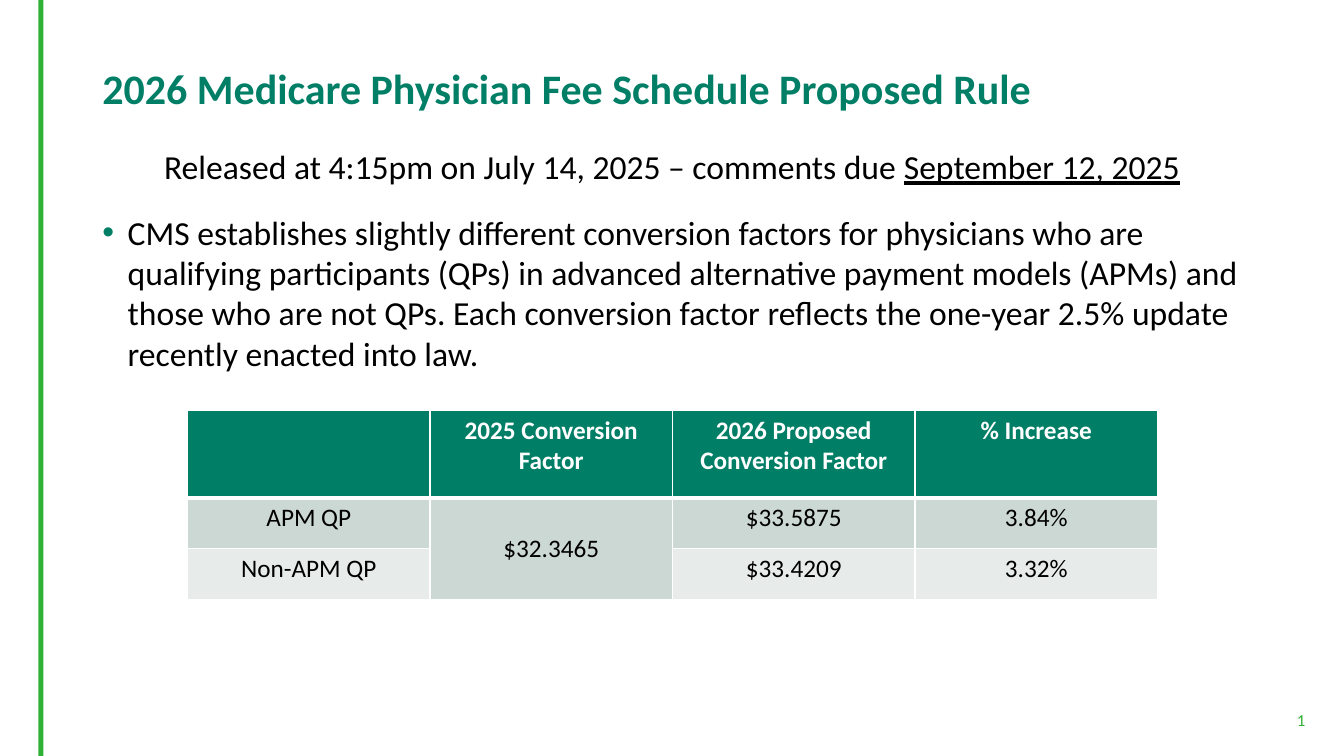
from lxml.etree import SubElement
from pptx import Presentation
from pptx.dml.color import RGBColor
from pptx.enum.shapes import MSO_SHAPE
from pptx.enum.text import MSO_ANCHOR, MSO_AUTO_SIZE, PP_ALIGN
from pptx.oxml.ns import qn
from pptx.util import Pt

TEAL = RGBColor(0x00, 0x7E, 0x66)
GREEN = RGBColor(0x2E, 0xB1, 0x35)
BLACK = RGBColor(0x00, 0x00, 0x00)
WHITE = RGBColor(0xFF, 0xFF, 0xFF)
BAND_DARK = RGBColor(0xCC, 0xD8, 0xD3)
BAND_LIGHT = RGBColor(0xE7, 0xEC, 0xEA)


class SlideBuilder:
    font = "Calibri"

    def __init__(self, slide):
        self.slide = slide

    def place(self, sp, left, top, width, height, anchor=MSO_ANCHOR.TOP):
        sp.left, sp.top, sp.width, sp.height = map(Pt, (left, top, width, height))
        tf = sp.text_frame
        tf.word_wrap = True
        tf.auto_size = MSO_AUTO_SIZE.NONE
        tf.vertical_anchor = anchor
        return tf

    def run(self, p, text, size, color, bold=False, underline=False):
        r = p.add_run()
        r.text = text
        f = r.font
        f.name, f.size, f.bold, f.underline = self.font, Pt(size), bold, underline
        f.color.rgb = color

    def bar(self, left, top, width, height, color):
        sp = self.slide.shapes.add_shape(
            MSO_SHAPE.RECTANGLE, Pt(left), Pt(top), Pt(width), Pt(height))
        sp.shadow.inherit = False
        sp.fill.solid()
        sp.fill.fore_color.rgb = color
        sp.line.fill.background()

    def title(self, text, *box):
        tf = self.place(self.slide.shapes.title, *box, MSO_ANCHOR.MIDDLE)
        p = tf.paragraphs[0]
        p.alignment = PP_ALIGN.LEFT
        p.line_spacing = 0.9
        self.run(p, text, 30, TEAL, bold=True)

    def body(self, paragraphs, *box):
        """Each paragraph is (bulleted, [(text, underlined), ...])."""
        tf = self.place(self.slide.placeholders[1], *box)
        for i, (bulleted, runs) in enumerate(paragraphs):
            p = tf.add_paragraph() if i else tf.paragraphs[0]
            p.space_before = Pt(18)
            p.alignment = PP_ALIGN.LEFT if bulleted else PP_ALIGN.CENTER
            self.bullet(p, 18 if bulleted else 0)
            for text, underlined in runs:
                self.run(p, text, 24, BLACK, underline=underlined)

    def bullet(self, p, indent):
        pPr = p._p.get_or_add_pPr()
        pPr.set("marL", str(Pt(indent)))
        pPr.set("indent", str(-Pt(indent)))
        if not indent:
            SubElement(pPr, qn("a:buNone"))
            return
        clr = SubElement(pPr, qn("a:buClr"))
        SubElement(clr, qn("a:srgbClr")).set("val", str(TEAL))
        SubElement(pPr, qn("a:buFont")).set("typeface", "Arial")
        SubElement(pPr, qn("a:buChar")).set("char", "•")

    def text(self, text, size, color, *box):
        sp = self.slide.shapes.add_textbox(0, 0, 0, 0)
        p = self.place(sp, *box, MSO_ANCHOR.BOTTOM).paragraphs[0]
        p.alignment = PP_ALIGN.RIGHT
        self.run(p, text, size, color)

    def border(self, cell, **widths):
        tcPr = cell._tc.get_or_add_tcPr()
        for side, width in widths.items():
            ln = SubElement(tcPr, qn(f"a:ln{side}"), w=str(Pt(width)))
            fill = SubElement(ln, qn("a:solidFill"))
            SubElement(fill, qn("a:srgbClr")).set("val", str(WHITE))

    def table(self, rows, fills, left, top, col_width, heights):
        n = len(rows[0])
        tbl = self.slide.shapes.add_table(
            len(rows), n, Pt(left), Pt(top), Pt(col_width * n), Pt(sum(heights))).table
        tbl.horz_banding = False
        for col in tbl.columns:
            col.width = Pt(col_width)
        for i, row in enumerate(rows):
            header = i == 0
            tbl.rows[i].height = Pt(heights[i])
            for j, text in enumerate(row):
                cell = tbl.cell(i, j)
                edge = 3 if header else 1
                self.border(cell, L=1, R=1, T=3 if i == 1 else 1, B=edge)
                cell.fill.solid()
                cell.fill.fore_color.rgb = fills[i]
                if text:
                    p = cell.text_frame.paragraphs[0]
                    p.alignment = PP_ALIGN.CENTER
                    self.run(p, text, 18, WHITE if header else BLACK, bold=header)
        return tbl


def main():
    prs = Presentation()
    prs.slide_width, prs.slide_height = Pt(960), Pt(540)
    s = SlideBuilder(prs.slides.add_slide(prs.slide_layouts[1]))

    # Accent bar and title
    s.bar(27.5, 0, 3.5, 540, GREEN)
    s.title("2026 Medicare Physician Fee Schedule Proposed Rule", 66, 28.75, 828, 72)

    # Release date and explanation
    s.body([
        (False, [("Released at 4:15pm on July 14, 2025 – comments due ", False),
                 ("September 12, 2025", True)]),
        (True, [("CMS establishes slightly different conversion factors for physicians "
                 "who are qualifying participants (QPs) in advanced alternative payment "
                 "models (APMs) and those who are not QPs. Each conversion factor reflects "
                 "the one-year 2.5% update recently enacted into law.", False)]),
    ], 66, 100.75, 828, 386)

    # Conversion factors, with the 2025 value shared by both groups
    tbl = s.table([
        ["", "2025 Conversion Factor", "2026 Proposed Conversion Factor", "% Increase"],
        ["APM QP", "$32.3465", "$33.5875", "3.84%"],
        ["Non-APM QP", "", "$33.4209", "3.32%"],
    ], [TEAL, BAND_DARK, BAND_LIGHT], 134, 293, 173.2, [62.6, 36.2, 36.2])
    shared = tbl.cell(1, 1)
    shared.merge(tbl.cell(2, 1))
    shared.vertical_anchor = MSO_ANCHOR.MIDDLE

    # Page number
    s.text("1", 12, GREEN, 689, 503.3, 250.6, 21.6)

    prs.save("out.pptx")


if __name__ == "__main__":
    main()
